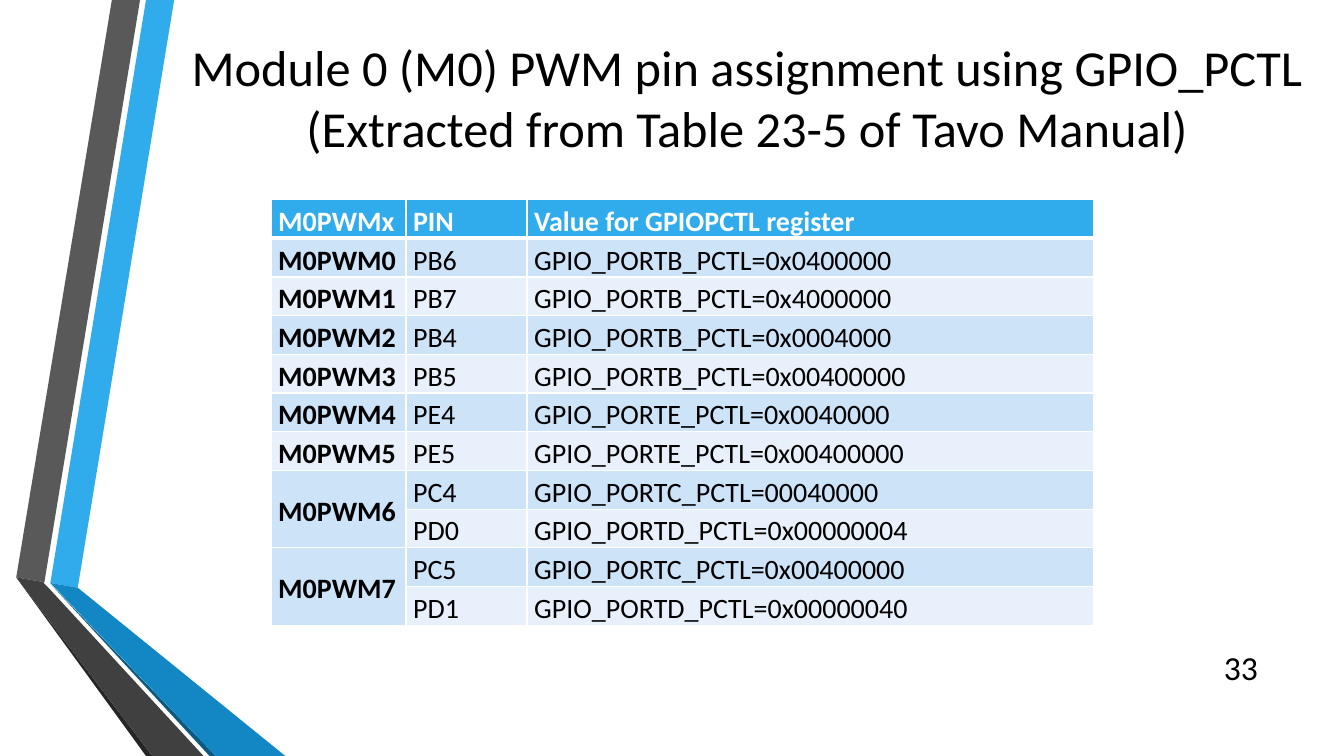
from lxml import etree
from pptx import Presentation
from pptx import util as u
from pptx.dml import color
from pptx.enum import text
from pptx.oxml import ns

FONT = "Calibri"
BLACK, WHITE = "000000", "FFFFFF"
HEADER_FILL = "30ACEC"
BAND_FILLS = ("CDE3F8", "E8F1FB")
SLIDE_WIDTH, SLIDE_HEIGHT = 33.87, 19.05
COLUMN_WIDTHS = (3.4, 3.05, 14.27)
ROW_HEIGHT = 0.92

RIBBONS = (
    (HEADER_FILL, ((1.27, 14.69), (1.96, 14.81), (4.39, 0), (3.68, 0))),
    ("595959", ((3.53, 0), (2.82, 0), (0.41, 14.55), (1.12, 14.67))),
    ("262626", ((0.41, 14.55), (3.68, 19.05), (3.84, 19.05))),
    ("0C5A82", ((1.27, 14.71), (5.28, 19.05), (5.44, 19.05))),
    ("1287C3", ((1.27, 14.69), (5.44, 19.05), (7.19, 19.05), (1.96, 14.81))),
    ("404040", ((5.13, 19.05), (1.22, 14.81), (1.09, 14.68), (1.12, 14.67),
                (0.41, 14.55), (3.84, 19.05))),
)

PIN_ROWS = (
    ("M0PWMx", "PIN", "Value for GPIOPCTL register"),
    ("M0PWM0", "PB6", "GPIO_PORTB_PCTL=0x0400000"),
    ("M0PWM1", "PB7", "GPIO_PORTB_PCTL=0x4000000"),
    ("M0PWM2", "PB4", "GPIO_PORTB_PCTL=0x0004000"),
    ("M0PWM3", "PB5", "GPIO_PORTB_PCTL=0x00400000"),
    ("M0PWM4", "PE4", "GPIO_PORTE_PCTL=0x0040000"),
    ("M0PWM5", "PE5", "GPIO_PORTE_PCTL=0x00400000"),
    ("M0PWM6", "PC4", "GPIO_PORTC_PCTL=00040000"),
    ("", "PD0", "GPIO_PORTD_PCTL=0x00000004"),
    ("M0PWM7", "PC5", "GPIO_PORTC_PCTL=0x00400000"),
    ("", "PD1", "GPIO_PORTD_PCTL=0x00000040"),
)


def rgb(value):
    """Turn a hex string into a colour."""
    return color.RGBColor.from_string(value)


def apply_format(target, values):
    """Set each named attribute of the target."""
    for name, value in values.items():
        setattr(target, name, value)


def paint(fill, value):
    """Give a fill one solid colour."""
    fill.solid()
    fill.fore_color.rgb = rgb(value)


def write(paragraph, words, size, value=BLACK, bold=False, **layout):
    """Write one formatted run into a paragraph."""
    apply_format(paragraph, layout)
    run = paragraph.add_run()
    run.text = words
    apply_format(run.font, {"name": FONT, "size": u.Pt(size), "bold": bold})
    run.font.color.rgb = rgb(value)


def add_ribbon(slide, value, points):
    """Draw one closed ribbon panel."""
    start, *others = [(u.Cm(x), u.Cm(y)) for x, y in points]
    builder = slide.shapes.build_freeform(*start)
    builder.add_line_segments(others, close=True)
    shape = builder.convert_to_shape()
    shape.shadow.inherit = False
    paint(shape.fill, value)
    shape.line.fill.background()


def add_text(slide, box, words, size, alignment):
    """Add a vertically centred text box."""
    shape = slide.shapes.add_textbox(*map(u.Cm, box))
    apply_format(shape.text_frame, {
        "word_wrap": True, "vertical_anchor": text.MSO_ANCHOR.MIDDLE})
    write(shape.text_frame.paragraphs[0], words, size, alignment=alignment)


def add_borders(cell, widths):
    """Put white borders on the named sides of a cell."""
    properties = cell._tc.get_or_add_tcPr()
    for index, (side, width) in enumerate(widths.items()):
        line = etree.Element(ns.qn(f"a:ln{side}"), w=str(u.Pt(width)))
        solid = etree.SubElement(line, ns.qn("a:solidFill"))
        etree.SubElement(solid, ns.qn("a:srgbClr"), val=WHITE)
        properties.insert(index, line)


def fill_cell(cell, words, row, column):
    """Style one table cell and write its words."""
    header = row == 0
    apply_format(cell, {
        "margin_left": u.Cm(0.18), "margin_right": u.Cm(0.18),
        "margin_top": 0, "margin_bottom": 0})
    paint(cell.fill, HEADER_FILL if header else BAND_FILLS[(row - 1) % 2])
    add_borders(cell, {"L": 1, "R": 1, "T": 3 if row == 1 else 1,
                       "B": 3 if header else 1})
    if words:
        write(cell.text_frame.paragraphs[0], words, 20,
              WHITE if header else BLACK, header or column == 0,
              line_spacing=1.15)


def add_pin_table(slide, left, top):
    """Add the pin table, joining cells under a shared module name."""
    frame = slide.shapes.add_table(
        len(PIN_ROWS), len(COLUMN_WIDTHS), u.Cm(left), u.Cm(top),
        u.Cm(sum(COLUMN_WIDTHS)), u.Cm(ROW_HEIGHT * len(PIN_ROWS)))
    table = frame.table
    for column, width in zip(table.columns, COLUMN_WIDTHS):
        column.width = u.Cm(width)
    for row, values in enumerate(PIN_ROWS):
        table.rows[row].height = u.Cm(ROW_HEIGHT)
        for column, words in enumerate(values):
            fill_cell(table.cell(row, column), words, row, column)
        if not values[0]:
            name_cell = table.cell(row - 1, 0)
            name_cell.merge(table.cell(row, 0))
            name_cell.vertical_anchor = text.MSO_ANCHOR.MIDDLE


def main():
    """Build and save the slide."""
    presentation = Presentation()
    apply_format(presentation, {"slide_width": u.Cm(SLIDE_WIDTH),
                                "slide_height": u.Cm(SLIDE_HEIGHT)})
    slide = presentation.slides.add_slide(presentation.slide_layouts[6])
    for value, points in RIBBONS:
        add_ribbon(slide, value, points)
    add_text(slide, (3.81, 0, 30.05, 4.88),
             "Module 0 (M0) PWM pin assignment using GPIO_PCTL "
             "(Extracted from Table 23-5 of Tavo Manual)",
             36, text.PP_ALIGN.CENTER)
    add_text(slide, (30.43, 16.31, 1.52, 1.02), "33", 24, text.PP_ALIGN.RIGHT)
    add_pin_table(slide, 6.83, 5.03)
    presentation.save("out.pptx")


if __name__ == "__main__":
    main()
